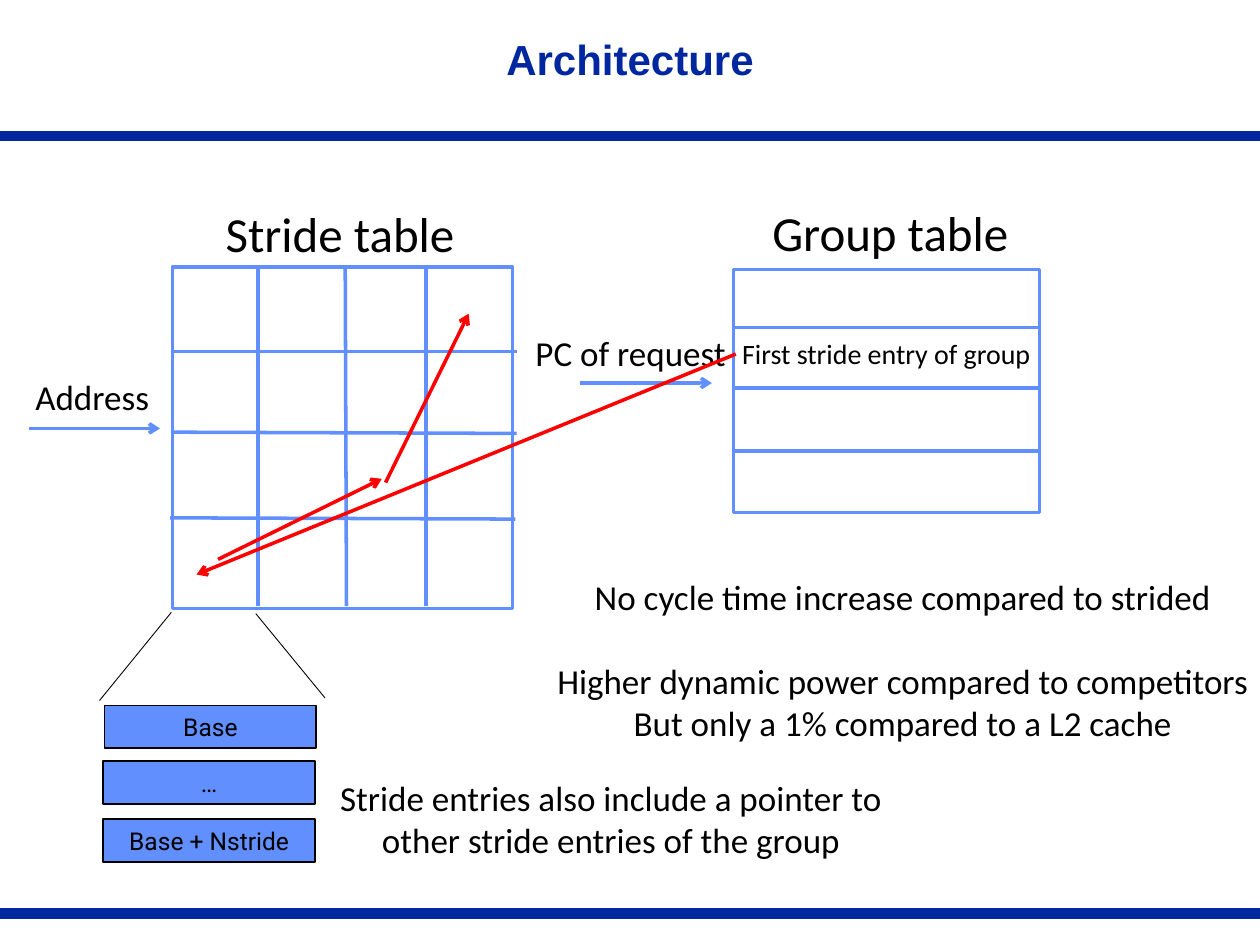
from pptx import Presentation
from pptx.dml.color import RGBColor
from pptx.enum.shapes import MSO_CONNECTOR, MSO_SHAPE
from pptx.enum.text import MSO_ANCHOR, MSO_AUTO_SIZE, PP_ALIGN
from pptx.oxml.ns import qn
from pptx.util import Inches, Pt
from lxml.etree import SubElement

NAVY = RGBColor(0x00, 0x27, 0x9F)
BLUE = RGBColor(0x61, 0x8F, 0xFD)
RED = RGBColor(0xFF, 0x00, 0x00)
BLACK = RGBColor(0x00, 0x00, 0x00)
WHITE = RGBColor(0xFF, 0xFF, 0xFF)


def add_run(paragraph, text, size, font="Calibri", color=BLACK, bold=False):
    run = paragraph.add_run()
    run.text = text
    run.font.size = Pt(size)
    run.font.name = font
    run.font.color.rgb = color
    run.font.bold = bold


def add_text(slide, left, top, width, height, lines, size, align=PP_ALIGN.LEFT):
    """Add an unwrapped label with one paragraph per line."""
    box = slide.shapes.add_textbox(Inches(left), Inches(top), Inches(width), Inches(height))
    frame = box.text_frame
    frame.word_wrap = False
    frame.auto_size = MSO_AUTO_SIZE.SHAPE_TO_FIT_TEXT
    frame.margin_left = frame.margin_right = Inches(0.05)
    frame.margin_top = frame.margin_bottom = Inches(0.05)
    for index, line in enumerate(lines):
        paragraph = frame.add_paragraph() if index else frame.paragraphs[0]
        paragraph.alignment = align
        add_run(paragraph, line, size)
    return frame


def add_title(slide, text):
    box = slide.shapes.add_textbox(Inches(1.75), Inches(0.08), Inches(6.5), Inches(0.83))
    frame = box.text_frame
    frame.word_wrap = True
    frame.vertical_anchor = MSO_ANCHOR.MIDDLE
    paragraph = frame.paragraphs[0]
    paragraph.alignment = PP_ALIGN.CENTER
    paragraph.line_spacing = 0.85
    add_run(paragraph, text, 24, "Arial", NAVY, True)


def add_rectangle(slide, left, top, width, height, fill, line, line_width):
    shape = slide.shapes.add_shape(
        MSO_SHAPE.RECTANGLE, Inches(left), Inches(top), Inches(width), Inches(height))
    shape.shadow.inherit = False
    shape.fill.solid()
    shape.fill.fore_color.rgb = fill
    shape.line.color.rgb = line
    shape.line.width = Pt(line_width)
    return shape


def add_entry(slide, left, top, text):
    """Add one field of a stride table entry."""
    shape = add_rectangle(slide, left, top, 1.68, 0.34, BLUE, BLACK, 1)
    shape.text_frame.vertical_anchor = MSO_ANCHOR.MIDDLE
    paragraph = shape.text_frame.paragraphs[0]
    paragraph.alignment = PP_ALIGN.CENTER
    add_run(paragraph, text, 14, "Roboto")


def add_line(slide, start, end, color=BLUE, width=2, arrow=False):
    connector = slide.shapes.add_connector(
        MSO_CONNECTOR.STRAIGHT, *(Inches(value) for value in (*start, *end)))
    connector.line.color.rgb = color
    connector.line.width = Pt(width)
    if arrow:
        SubElement(connector.line._get_or_add_ln(), qn("a:tailEnd"), type="arrow")
    SubElement(connector._element.spPr, qn("a:effectLst"))


def add_stride_table(slide):
    add_rectangle(slide, 1.37, 2.12, 2.7, 2.71, WHITE, BLUE, 2)
    add_text(slide, 1.74, 1.57, 1.94, 0.57, ["Stride table"], 28)
    for top_x, bottom_x in ((2.05, 2.05), (2.74, 2.75), (3.38, 3.38)):
        add_line(slide, (top_x, 2.12), (bottom_x, 4.81))
    for left, y, right_y in ((1.36, 2.79, 2.79), (1.36, 3.43, 3.44), (1.35, 4.11, 4.12)):
        add_line(slide, (left, y), (left + 2.74, right_y))


def add_group_table(slide):
    add_rectangle(slide, 5.82, 2.14, 2.43, 1.93, WHITE, BLUE, 2)
    add_text(slide, 6.08, 1.56, 2.01, 0.57, ["Group table"], 28)
    for y in (2.6, 3.08, 3.58):
        add_line(slide, (5.83, y), (8.25, y))


def main():
    presentation = Presentation()
    presentation.slide_width = Inches(10)
    presentation.slide_height = Inches(7.5)
    slide = presentation.slides.add_slide(presentation.slide_layouts[6])

    # Title and page rules
    add_line(slide, (10, 7.25), (0, 7.25), NAVY, 6)
    add_line(slide, (10, 1.08), (0, 1.08), NAVY, 6.13)
    add_title(slide, "Architecture")

    # Stride table and its index
    add_stride_table(slide)
    add_line(slide, (0.23, 3.4), (1.27, 3.4), arrow=True)
    add_text(slide, 0.23, 2.93, 1.01, 0.44, ["Address"], 20)

    # Expanded stride entry
    add_line(slide, (1.36, 4.86), (0.79, 5.56), BLACK, 0.5)
    add_line(slide, (2.03, 4.87), (2.58, 5.54), BLACK, 0.5)
    for left, top, text in ((0.83, 5.6, "Base"), (0.82, 6.5, "Base + Nstride"), (0.82, 6.04, "…")):
        add_entry(slide, left, top, text)

    # Group table and its index
    add_group_table(slide)
    add_line(slide, (4.6, 3.04), (5.65, 3.04), arrow=True)
    add_text(slide, 4.2, 2.58, 1.63, 0.44, ["PC of request"], 20)

    # Notes and pointers between entries
    add_text(slide, 2.62, 6.11, 4.46, 0.77,
             ["Stride entries also include a pointer to",
              "other stride entries of the group"], 20, PP_ALIGN.CENTER)
    add_line(slide, (1.73, 4.44), (3.03, 3.8), RED, arrow=True)
    add_line(slide, (3.06, 3.83), (3.72, 2.49), RED, arrow=True)
    add_text(slide, 5.84, 2.62, 2.43, 0.37, ["First stride entry of group"], 16)
    add_line(slide, (5.84, 2.81), (1.56, 4.56), RED, arrow=True)
    costs = add_text(slide, 4.34, 4.52, 5.65, 1.45,
                     ["No cycle time increase compared to strided",
                      "Higher dynamic power compared to competitors",
                      "But only a 1% compared to a L2 cache"], 20, PP_ALIGN.CENTER)
    costs.paragraphs[1].space_before = Pt(24)

    presentation.save("out.pptx")


if __name__ == "__main__":
    main()
